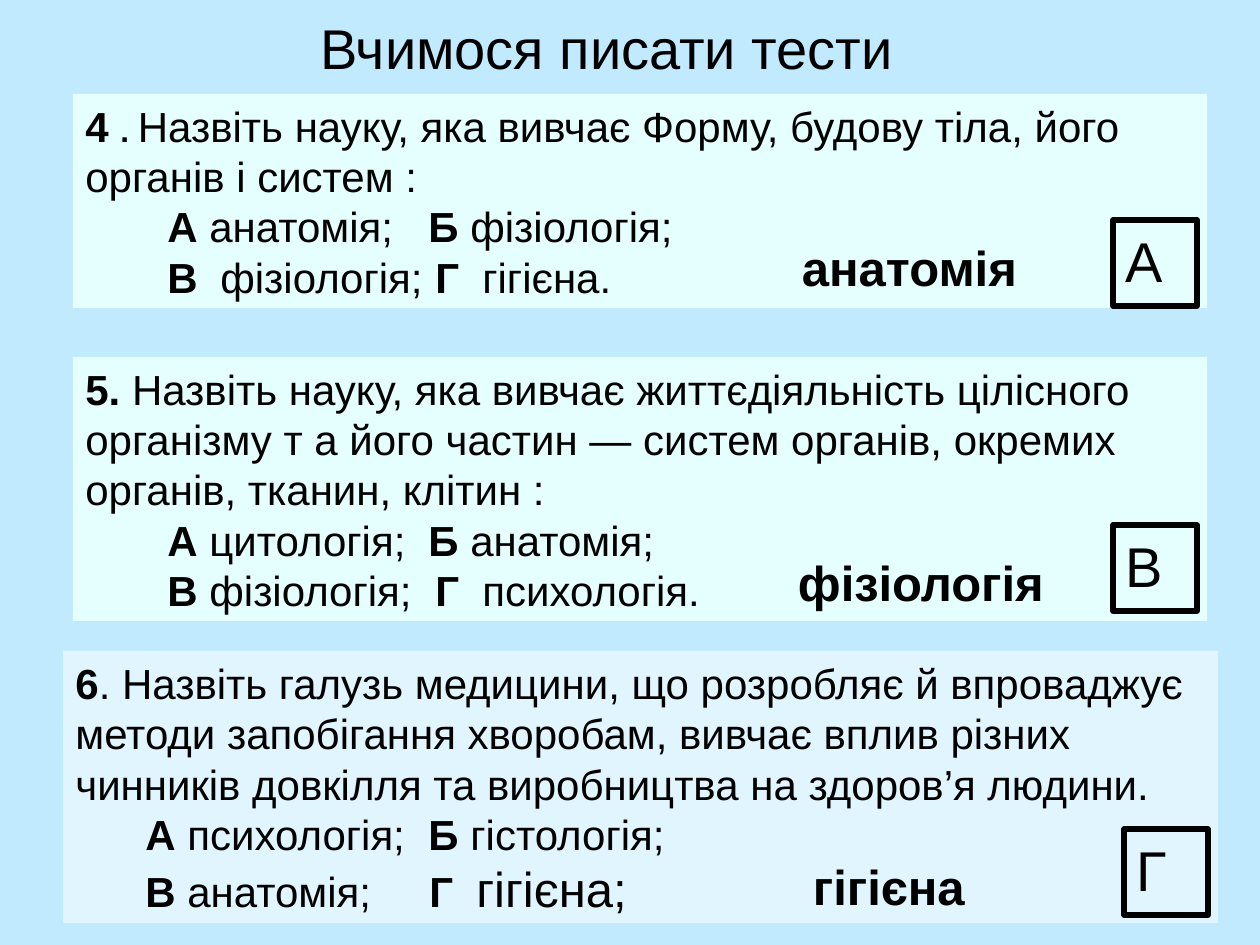
"""Build a slide of three biology test questions with their answers."""
from dataclasses import dataclass

from lxml.etree import SubElement
from pptx import Presentation
from pptx.dml.color import RGBColor
from pptx.enum.shapes import MSO_SHAPE
from pptx.enum.text import MSO_ANCHOR, MSO_AUTO_SIZE, PP_ALIGN
from pptx.oxml.ns import qn
from pptx.util import Emu, Pt

COLORS = {"back": "C1EAFF", "mint": "E5FFFF", "sky": "E1F5FF", "ink": "000000"}
PX = 914400 / 126
INSET = 13


@dataclass
class Box:
    x: int
    y: int
    w: int
    h: int

    def emu(self) -> list[Emu]:
        return [px(v) for v in (self.x, self.y, self.w, self.h)]


@dataclass
class Options:
    words: tuple[str, str, str, str]
    stops: tuple[int, int, int, int]
    last_size: int = 24


@dataclass
class Question:
    box: Box
    fill: str
    prompt: list[tuple[str, int, bool]]
    options: list[Options]
    answer: str
    answer_box: Box
    answer_inset: int
    letter: str
    letter_box: Box


def px(value: int) -> Emu:
    return Emu(round(value * PX))


def rgb(name: str) -> RGBColor:
    return RGBColor.from_string(COLORS[name])


def add_text(p, text: str, *, size: int = 24, bold: bool = False) -> None:
    r = p.add_run()
    r.text = text
    r.font.name = "Arial"
    r.font.size = Pt(size)
    r.font.bold = bold
    r.font.color.rgb = rgb("ink")


def set_tabs(p, stops: tuple[int, ...]) -> None:
    tabs = SubElement(p._p.get_or_add_pPr(), qn("a:tabLst"))
    for stop in stops:
        SubElement(tabs, qn("a:tab"), pos=str(px(stop)), algn="l")


def add_rect(s, box: Box, fill: str = "", line: int = 0):
    sp = s.shapes.add_shape(MSO_SHAPE.RECTANGLE, *box.emu())
    sp.shadow.inherit = False
    if fill:
        sp.fill.solid()
        sp.fill.fore_color.rgb = rgb(fill)
    else:
        sp.fill.background()
    if line:
        sp.line.color.rgb = rgb("ink")
        sp.line.width = Pt(line)
    else:
        sp.line.fill.background()
    tf = sp.text_frame
    tf.word_wrap = True
    tf.vertical_anchor = MSO_ANCHOR.TOP
    tf.paragraphs[0].alignment = PP_ALIGN.LEFT
    return tf


def add_options(tf, row: Options) -> None:
    p = tf.add_paragraph()
    p.alignment = PP_ALIGN.LEFT
    set_tabs(p, row.stops)
    for i, word in enumerate(row.words):
        size = row.last_size if i == 3 else 24
        add_text(p, "\t" + word, size=size, bold=i % 2 == 0)


def add_question(s, q: Question) -> None:
    tf = add_rect(s, q.box, q.fill)
    for text, size, bold in q.prompt:
        add_text(tf.paragraphs[0], text, size=size, bold=bold)
    for row in q.options:
        add_options(tf, row)
    tf = s.shapes.add_textbox(*q.answer_box.emu()).text_frame
    tf.word_wrap = True
    tf.margin_left = px(q.answer_inset)
    add_text(tf.paragraphs[0], q.answer, size=28, bold=True)
    tf = add_rect(s, q.letter_box, line=3)
    add_text(tf.paragraphs[0], q.letter, size=32)


def add_title(s, text: str, box: Box) -> None:
    sp = s.shapes.title
    sp.left, sp.top, sp.width, sp.height = box.emu()
    tf = sp.text_frame
    tf.auto_size = MSO_AUTO_SIZE.NONE
    tf.vertical_anchor = MSO_ANCHOR.MIDDLE
    p = tf.paragraphs[0]
    p.alignment = PP_ALIGN.CENTER
    add_text(p, text, size=32)


QUESTIONS = [
    Question(
        Box(73, 94, 1134, 214), "mint",
        [("4 ", 24, True), (". ", 18, True),
         ("Назвіть науку, яка вивчає Форму, будову тіла, його органів і систем :", 24, False)],
        [Options(("А", "анатомія;", "Б", "фізіологія;"), (82, 124, 343, 385)),
         Options(("В", "фізіологія;", "Г", "гігієна."), (82, 135, 350, 397))],
        "анатомія", Box(777, 231, 273, 72), INSET + 12,
        "А", Box(1113, 220, 84, 86),
    ),
    Question(
        Box(73, 357, 1134, 264), "mint",
        [("5. ", 24, True),
         ("Назвіть науку, яка вивчає життєдіяльність цілісного організму т а його "
          "частин — систем органів, окремих органів, тканин, клітин :", 24, False)],
        [Options(("А", "цитологія;", "Б", "анатомія;"), (82, 124, 343, 385)),
         Options(("В", "фізіологія;", "Г", "психологія."), (82, 124, 350, 397))],
        "фізіологія", Box(746, 546, 325, 72), INSET + 39,
        "В", Box(1113, 525, 84, 86),
    ),
    Question(
        Box(63, 651, 1155, 272), "sky",
        [("6", 24, True),
         (". Назвіть галузь медицини, що розробляє й впроваджує методи запобігання "
          "хворобам, вивчає вплив різних чинників довкілля та виробництва на "
          "здоров’я людини.", 24, False)],
        [Options(("А", "психологія;", "Б", "гістологія;"), (70, 112, 353, 395)),
         Options(("В", "анатомія;", "Г", "гігієна;"), (70, 112, 354, 401), 28)],
        "гігієна", Box(788, 850, 220, 72), INSET + 12,
        "Г", Box(1124, 829, 84, 86),
    ),
]


def main() -> None:
    prs = Presentation()
    prs.slide_width, prs.slide_height = px(1260), px(945)
    s = prs.slides.add_slide(prs.slide_layouts[5])
    s.background.fill.solid()
    s.background.fill.fore_color.rgb = rgb("back")
    add_title(s, "Вчимося писати тести", Box(105, 0, 1004, 94))
    for q in QUESTIONS:
        add_question(s, q)
    prs.save("out.pptx")


if __name__ == "__main__":
    main()
